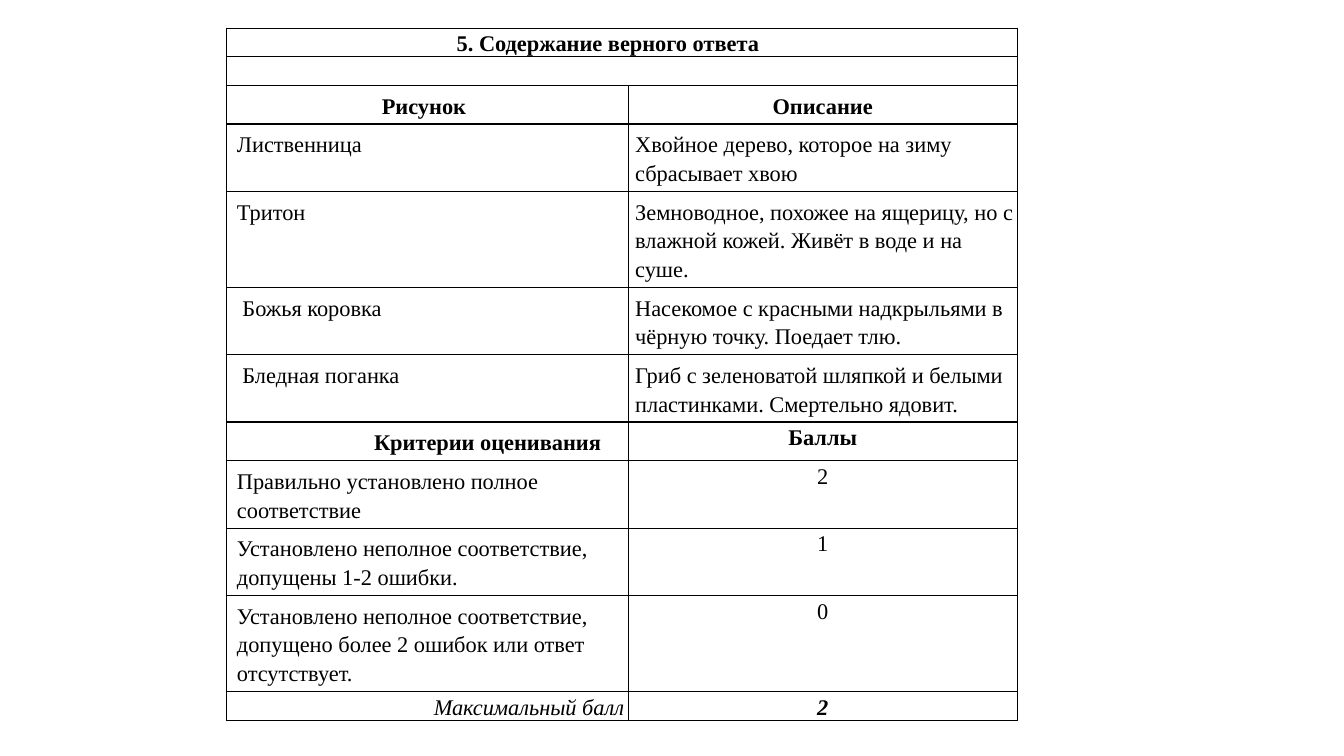
from lxml.etree import SubElement
from pptx import Presentation
from pptx.dml.color import RGBColor as RGB
from pptx.enum.text import PP_ALIGN as AL
from pptx.oxml.ns import qn
from pptx.util import Inches, Pt

COLORS = {"ink": "000000", "paper": "FFFFFF"}
LINE, PAD = 0.0377, 0.0133  # shares of the slide height
BOTH, NONE = (0.1, 0.05, 0.1, 0.05), (0, 0, 0, 0)
HEAD_L, HEAD_R = (0, 0.05, 0.07, 0.05), (0.07, 0.05, 0.07, 0.05)
DESC = (0.07, 0.05, 0, 0.05)


def cell(text, ins=BOTH, al=AL.LEFT, style="", indent=0):
    return dict(text=text, ins=ins, al=al, style=style, indent=indent)


def creature(name, description, indent=0):
    return [cell(name, indent=indent), cell(description, DESC)]


def criterion(text, points):
    return [cell(text), cell(points, NONE, AL.CENTER)]


# Each row: text lines, padded or not, cells
ROWS = [
    (1, False, [cell("5. Содержание верного ответа", (0, 0, 0.28, 0), AL.CENTER, "b")]),
    (1, False, [cell("", NONE)]),
    (1, True, [cell("Рисунок", HEAD_L, AL.CENTER, "b"),
               cell("Описание", HEAD_R, AL.CENTER, "b")]),
    (2, True, creature("Лиственница", "Хвойное дерево, которое на зиму сбрасывает хвою")),
    (3, True, creature("Тритон", "Земноводное, похожее на ящерицу, но с влажной кожей. "
                                 "Живёт в воде и на суше.")),
    (2, True, creature("Божья коровка", "Насекомое с красными надкрыльями в чёрную точку. "
                                        "Поедает тлю.", 0.055)),
    (2, True, creature("Бледная поганка", "Гриб с зеленоватой шляпкой и белыми пластинками. "
                                          "Смертельно ядовит.", 0.055)),
    (1, True, [cell("Критерии оценивания", style="b", indent=1.36),
               cell("Баллы", NONE, AL.CENTER, "b")]),
    (2, True, criterion("Правильно установлено полное соответствие", "2")),
    (2, True, criterion("Установлено неполное соответствие, допущены 1-2 ошибки.", "1")),
    (3, True, criterion("Установлено неполное соответствие, допущено более 2 ошибок "
                        "или ответ отсутствует.", "0")),
    (1, False, [cell("Максимальный балл", (0, 0, 0.04, 0), AL.RIGHT, "i"),
                cell("2", NONE, AL.CENTER, "bi")]),
]


class Deck:
    font, size, spacing = "Times New Roman", Pt(16), 1.15

    def __init__(self):
        self.prs = Presentation()
        self.prs.slide_width, self.prs.slide_height = Inches(13.33), Inches(7.5)
        self.s = self.prs.slides.add_slide(self.prs.slide_layouts[6])

    def x(self, share):
        return int(self.prs.slide_width * share)

    def y(self, share):
        return int(self.prs.slide_height * share)

    def table(self, left, top, widths, rows):
        heights = [self.y(n * LINE + padded * PAD) for n, padded, _ in rows]
        tbl = self.s.shapes.add_table(len(rows), len(widths), self.x(left), self.y(top),
                                      self.x(sum(widths)), sum(heights)).table
        tbl.first_row = tbl.horz_banding = False
        for col, width in zip(tbl.columns, widths):
            col.width = self.x(width)
        for i, (_, _, cells) in enumerate(rows):
            tbl.rows[i].height = heights[i]
            for j in range(len(widths)):
                self.frame(tbl.cell(i, j))
            if len(cells) == 1:
                tbl.cell(i, 0).merge(tbl.cell(i, len(widths) - 1))
            for j, content in enumerate(cells):
                self.fill_text(tbl.cell(i, j), **content)

    def frame(self, c):
        """Give the cell thin borders and a plain fill."""
        tcPr = c._tc.get_or_add_tcPr()
        for side in ("a:lnL", "a:lnR", "a:lnT", "a:lnB"):
            ln = SubElement(tcPr, qn(side), w=str(Pt(1)))
            SubElement(SubElement(ln, qn("a:solidFill")), qn("a:srgbClr"), val=COLORS["ink"])
        c.fill.solid()
        c.fill.fore_color.rgb = RGB.from_string(COLORS["paper"])

    def fill_text(self, c, text, ins, al, style, indent):
        c.margin_left, c.margin_top, c.margin_right, c.margin_bottom = map(Inches, ins)
        p = c.text_frame.paragraphs[0]
        p.text = text
        p.alignment, p.line_spacing, p.space_after = al, self.spacing, Pt(10)
        if indent:
            p._p.get_or_add_pPr().set("marL", str(Inches(indent)))
        if not text:
            p._p.get_or_add_endParaRPr().set("sz", "1200")
        for r in p.runs:
            r.font.name, r.font.size = self.font, self.size
            r.font.bold, r.font.italic = "b" in style, "i" in style
            r.font.color.rgb = RGB.from_string(COLORS["ink"])


def main():
    deck = Deck()
    deck.table(0.1688, 0.0373, (0.2986, 0.2895), ROWS)
    deck.prs.save("out.pptx")


if __name__ == "__main__":
    main()
